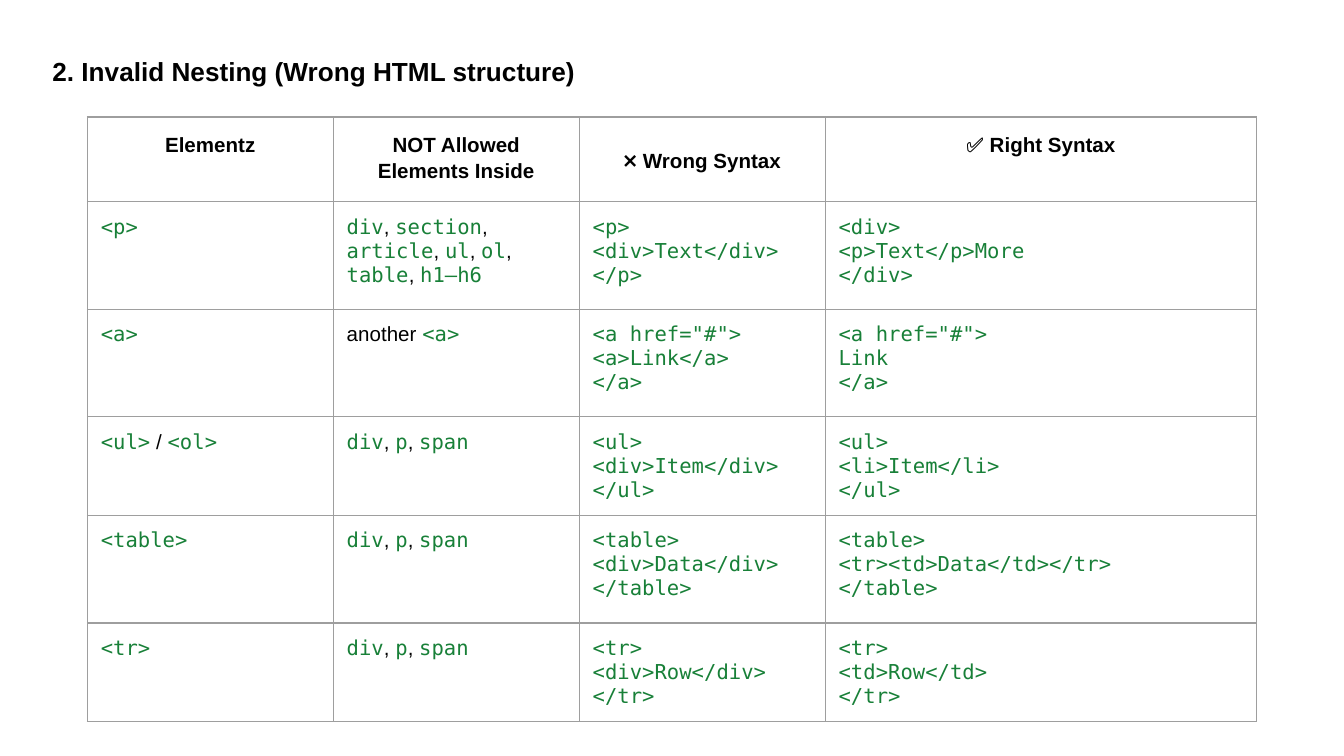
from dataclasses import dataclass

from lxml.etree import SubElement
from pptx import Presentation
from pptx.dml.color import RGBColor
from pptx.enum.text import MSO_ANCHOR, MSO_AUTO_SIZE, PP_ALIGN
from pptx.oxml import parse_xml
from pptx.oxml.ns import nsdecls, qn
from pptx.util import Inches, Pt

BLACK = RGBColor(0x00, 0x00, 0x00)
CODE_GREEN = RGBColor(0x18, 0x80, 0x38)
BORDER_GRAY = RGBColor(0x9E, 0x9E, 0x9E)
TEXT_FONT = "Arial"
CODE_FONT = "DejaVu Sans Mono"
INSET = Inches(0.1)
BORDER_WIDTH = Pt(0.75)
LINE_BREAK = "\v"
NEW_PARAGRAPH = "\n"


@dataclass
class NestingRule:
    """Backticks in element and banned mark code; wrong and right are all code."""
    element: str
    banned: str
    wrong: list[str]
    right: list[str]
    height: float
    separator: str = LINE_BREAK


HEADERS = ["Elementz", "NOT Allowed Elements Inside", "❌ Wrong Syntax", "✅ Right Syntax"]
HEADER_HEIGHT = 0.63
COLUMN_WIDTHS = [1.83, 1.83, 1.83, 3.21]
INLINE_BAN = "`div`, `p`, `span`"
RULES = [
    NestingRule("`<p>`", "`div`, `section`, `article`, `ul`, `ol`, `table`, `h1–h6`",
                ["<p>", "<div>Text</div>", "</p>"],
                ["<div>", "<p>Text</p>More", "</div>"], 0.8),
    NestingRule("`<a>`", "another `<a>`",
                ['<a href="#">', "<a>Link</a>", "</a>"],
                ['<a href="#">', "Link", "</a>"], 0.8),
    NestingRule("`<ul>` / `<ol>`", INLINE_BAN,
                ["<ul>", "<div>Item</div>", "</ul>"],
                ["<ul>", "<li>Item</li>", "</ul>"], 0.6),
    NestingRule("`<table>`", INLINE_BAN,
                ["<table>", "<div>Data</div>", "</table>"],
                ["<table>", "<tr><td>Data</td></tr>", "</table>"], 0.8),
    NestingRule("`<tr>`", INLINE_BAN,
                ["<tr>", "<div>Row</div>", "</tr>"],
                ["<tr>", "<td>Row</td>", "</tr>"], 0.6, NEW_PARAGRAPH),
]


def set_font(font, name: str, color: RGBColor, size: float = 11, bold: bool = False) -> None:
    font.name, font.size, font.bold = name, Pt(size), bold
    font.color.rgb = color


def set_insets(box) -> None:
    box.margin_left = box.margin_right = box.margin_top = box.margin_bottom = INSET


def format_cell(cell) -> None:
    """Clear the fill, then set the insets and the four borders."""
    set_insets(cell)
    cell.fill.background()
    tc_pr = cell._tc.get_or_add_tcPr()
    for i, side in enumerate("LRTB"):
        ln = parse_xml(f'<a:ln{side} {nsdecls("a")} w="{BORDER_WIDTH}"/>')
        fill = SubElement(ln, qn("a:solidFill"))
        SubElement(fill, qn("a:srgbClr"), val=str(BORDER_GRAY))
        tc_pr.insert(i, ln)


def write_header(cell, text: str) -> None:
    p = cell.text_frame.paragraphs[0]
    p.text = text
    p.alignment = PP_ALIGN.CENTER
    p.line_spacing = 1.15
    set_font(p.font, TEXT_FONT, BLACK, bold=True)


def write_mixed(cell, text: str) -> None:
    """Write text whose backticked parts are code."""
    p = cell.text_frame.paragraphs[0]
    for i, part in enumerate(text.split("`")):
        if part:
            r = p.add_run()
            r.text = part
            if i % 2:
                set_font(r.font, CODE_FONT, CODE_GREEN)
            else:
                set_font(r.font, TEXT_FONT, BLACK)


def write_code(cell, text: str) -> None:
    cell.text = text
    for p in cell.text_frame.paragraphs:
        set_font(p.font, CODE_FONT, CODE_GREEN)


def add_title(slide, text: str) -> None:
    sp = slide.shapes.title
    sp.left, sp.top, sp.width, sp.height = map(Inches, (0.24, 0.31, 8.63, 0.56))
    tf = sp.text_frame
    set_insets(tf)
    tf.margin_left = Inches(0.15)
    tf.word_wrap = True
    tf.auto_size = MSO_AUTO_SIZE.NONE
    tf.vertical_anchor = MSO_ANCHOR.TOP
    p = tf.paragraphs[0]
    p.text = text
    p.alignment = PP_ALIGN.LEFT
    set_font(p.font, TEXT_FONT, BLACK, size=14, bold=True)


def add_rules_table(slide) -> None:
    heights = [HEADER_HEIGHT] + [rule.height for rule in RULES]
    table = slide.shapes.add_table(
        len(heights), len(COLUMN_WIDTHS), Inches(0.65), Inches(0.87),
        Inches(sum(COLUMN_WIDTHS)), Inches(sum(heights))).table
    table.first_row = table.horz_banding = False
    for column, width in zip(table.columns, COLUMN_WIDTHS):
        column.width = Inches(width)
    for row, height in zip(table.rows, heights):
        row.height = Inches(height)
    for cell in table.iter_cells():
        format_cell(cell)
    for col, text in enumerate(HEADERS):
        write_header(table.cell(0, col), text)
    table.cell(0, 2).vertical_anchor = MSO_ANCHOR.MIDDLE
    for row, rule in enumerate(RULES, start=1):
        write_mixed(table.cell(row, 0), rule.element)
        write_mixed(table.cell(row, 1), rule.banned)
        write_code(table.cell(row, 2), rule.separator.join(rule.wrong))
        write_code(table.cell(row, 3), rule.separator.join(rule.right))


def main() -> None:
    prs = Presentation()
    prs.slide_width = Inches(10)
    prs.slide_height = prs.slide_width * 9 // 16
    slide = prs.slides.add_slide(prs.slide_layouts[5])
    add_title(slide, "2. Invalid Nesting (Wrong HTML structure)")
    add_rules_table(slide)
    prs.save("out.pptx")


if __name__ == "__main__":
    main()
